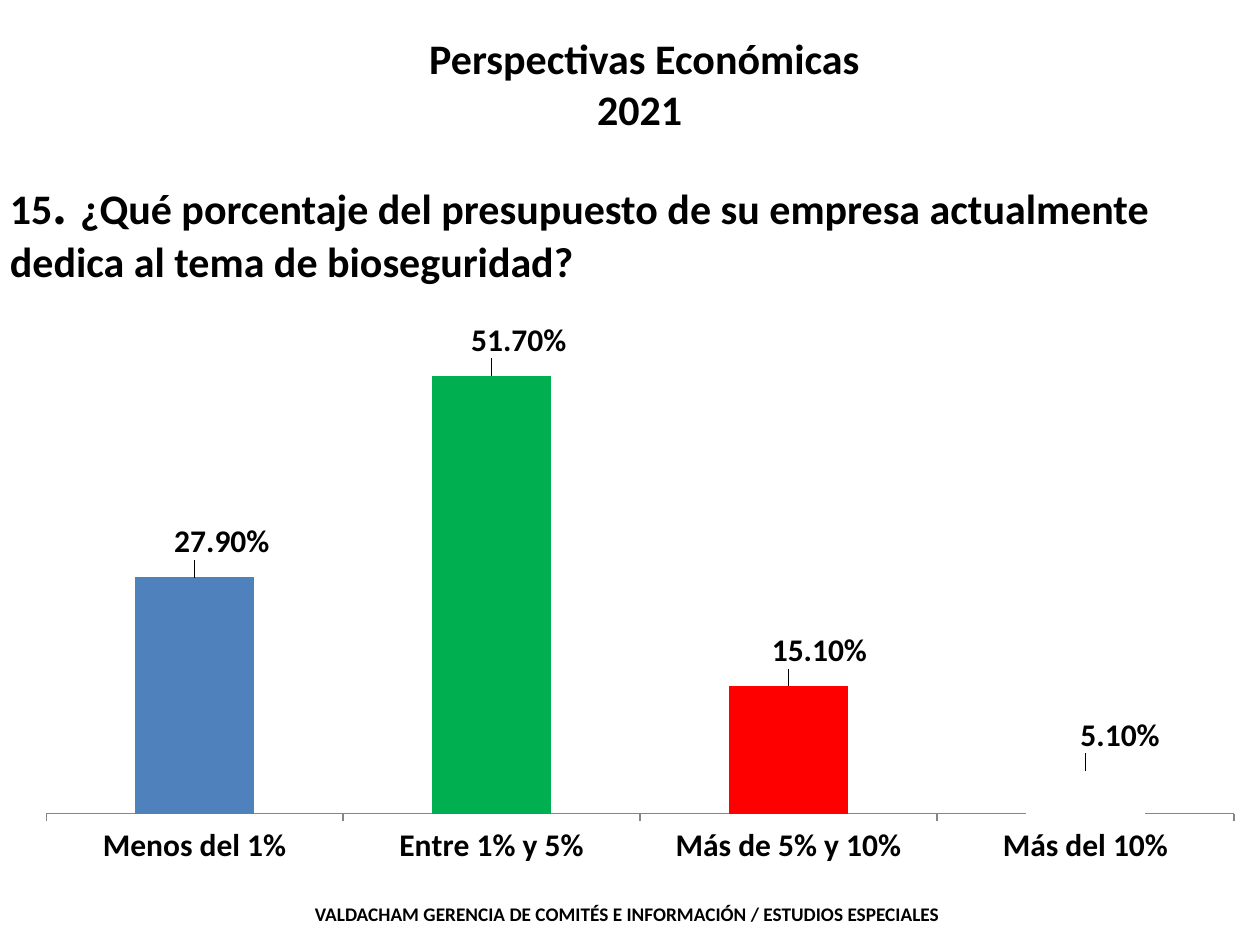
from lxml.etree import SubElement
from pptx import Presentation
from pptx.chart.data import CategoryChartData
from pptx.dml.color import RGBColor
from pptx.enum.chart import XL_CHART_TYPE as ChartType, XL_LABEL_POSITION as LabelPosition
from pptx.enum.chart import XL_TICK_MARK as TickMark
from pptx.enum.text import MSO_ANCHOR as Anchor, PP_ALIGN as Align
from pptx.oxml.ns import qn
from pptx.util import Inches, Pt

FONT = "Calibri"
BLACK = "000000"
# category, share, bar colour, sideways shift of the label
ANSWERS = [
    ("Menos del 1%", 0.279, "4F81BD", 0.022),
    ("Entre 1% y 5%", 0.517, "00B050", 0.022),
    ("Más de 5% y 10%", 0.151, "FF0000", 0.025),
    ("Más del 10%", 0.051, "FFFFFF", 0.028),
]
LABEL_LIFT = -0.02


def rgb(value):
    return RGBColor.from_string(value)


def style_font(font, size, bold=True, color=BLACK):
    font.name, font.size, font.bold = FONT, Pt(size), bold
    font.color.rgb = rgb(color)


def add_span(para, text, size=24, **style):
    span = para.add_run()
    span.text = text
    style_font(span.font, size, **style)


def place(shape, left, top, width, height):
    shape.left, shape.top = Inches(left), Inches(top)
    shape.width, shape.height = Inches(width), Inches(height)


def add_text_box(page, box):
    frame = page.shapes.add_textbox(*map(Inches, box)).text_frame
    frame.word_wrap = True
    return frame.paragraphs[0]


def set_layout(parent, position, **values):
    """Give a chart part a manual layout, as fractions of the chart."""
    for old in parent.findall(qn("c:layout")):
        parent.remove(old)
    layout = SubElement(parent, qn("c:layout"))
    parent.insert(position, layout)
    manual = SubElement(layout, qn("c:manualLayout"))
    for name, value in values.items():
        SubElement(manual, qn(f"c:{name}")).set("val", str(value))


def add_heading(page, box):
    title = page.shapes.title
    place(title, *box)
    frame = title.text_frame
    frame.word_wrap = True
    frame.vertical_anchor = Anchor.TOP
    for index, line in enumerate(["Perspectivas Económicas", "2021 "]):
        para = frame.add_paragraph() if index else frame.paragraphs[0]
        para.alignment = Align.CENTER
        add_span(para, line)


def add_question(page, box):
    para = add_text_box(page, box)
    add_span(para, "15")
    add_span(para, ". ", size=32)
    add_span(para, "¿Qué porcentaje del presupuesto de su empresa "
                   "actualmente dedica al tema de bioseguridad?")


def add_footer(page, box):
    para = add_text_box(page, box)
    add_span(para, "VALDACHAM GERENCIA DE COMITÉS E INFORMACIÓN / ESTUDIOS ESPECIALES",
             size=11)


def add_answer_chart(page, box):
    data = CategoryChartData(number_format="0.00%")
    data.categories = [answer[0] for answer in ANSWERS]
    data.add_series("Series 1", [answer[1] for answer in ANSWERS])
    chart = page.shapes.add_chart(
        ChartType.COLUMN_CLUSTERED, *map(Inches, box), data).chart
    chart.has_legend = chart.has_title = False
    style_font(chart.font, 10, bold=False)

    # Axes
    values = chart.value_axis
    values.minimum_scale, values.maximum_scale = 0, 0.6
    values.has_major_gridlines = values.visible = False
    values.tick_labels.number_format = "0.00%"
    values.tick_labels.number_format_is_linked = False
    categories = chart.category_axis
    categories.major_tick_mark = TickMark.OUTSIDE
    categories.format.line.color.rgb = rgb("868686")
    style_font(categories.tick_labels.font, 18)

    # Bars and their labels
    plot = chart.plots[0]
    plot.gap_width = 150
    plot.vary_by_categories = False
    series = plot.series[0]
    series.format.fill.solid()
    series.format.fill.fore_color.rgb = rgb(ANSWERS[0][2])
    labels = series.data_labels
    labels.show_value = True
    labels.number_format = "0.00%"
    labels.number_format_is_linked = False
    labels.position = LabelPosition.OUTSIDE_END
    style_font(labels.font, 18)
    for index, (_, _, color, _) in enumerate(ANSWERS):
        point = series.points[index]
        point.format.fill.solid()
        point.format.fill.fore_color.rgb = rgb(color)
        style_font(point.data_label.font, 18)
        point.data_label.position = LabelPosition.OUTSIDE_END

    # Manual places of the labels and the plot area
    root = chart.element if hasattr(chart, "element") else chart._chartSpace
    for label, answer in zip(root.iter(qn("c:dLbl")), ANSWERS):
        set_layout(label, 1, x=answer[3], y=LABEL_LIFT)
    area = next(root.iter(qn("c:plotArea")))
    set_layout(area, 0, layoutTarget="inner", xMode="edge", yMode="edge",
               x=0.02, y=0.02, w=0.96, h=0.87)


def main():
    deck = Presentation()
    deck.slide_width, deck.slide_height = Inches(10), Inches(7.5)
    page = deck.slides.add_slide(deck.slide_layouts[5])
    add_heading(page, (2.4, 0.21, 5.43, 0.91))
    add_footer(page, (2.4, 7.11, 5.51, 0.27))
    add_question(page, (-0.02, 1.29, 10.02, 1.04))
    add_answer_chart(page, (0.17, 2.33, 9.82, 4.64))
    deck.save("out.pptx")


if __name__ == "__main__":
    main()
